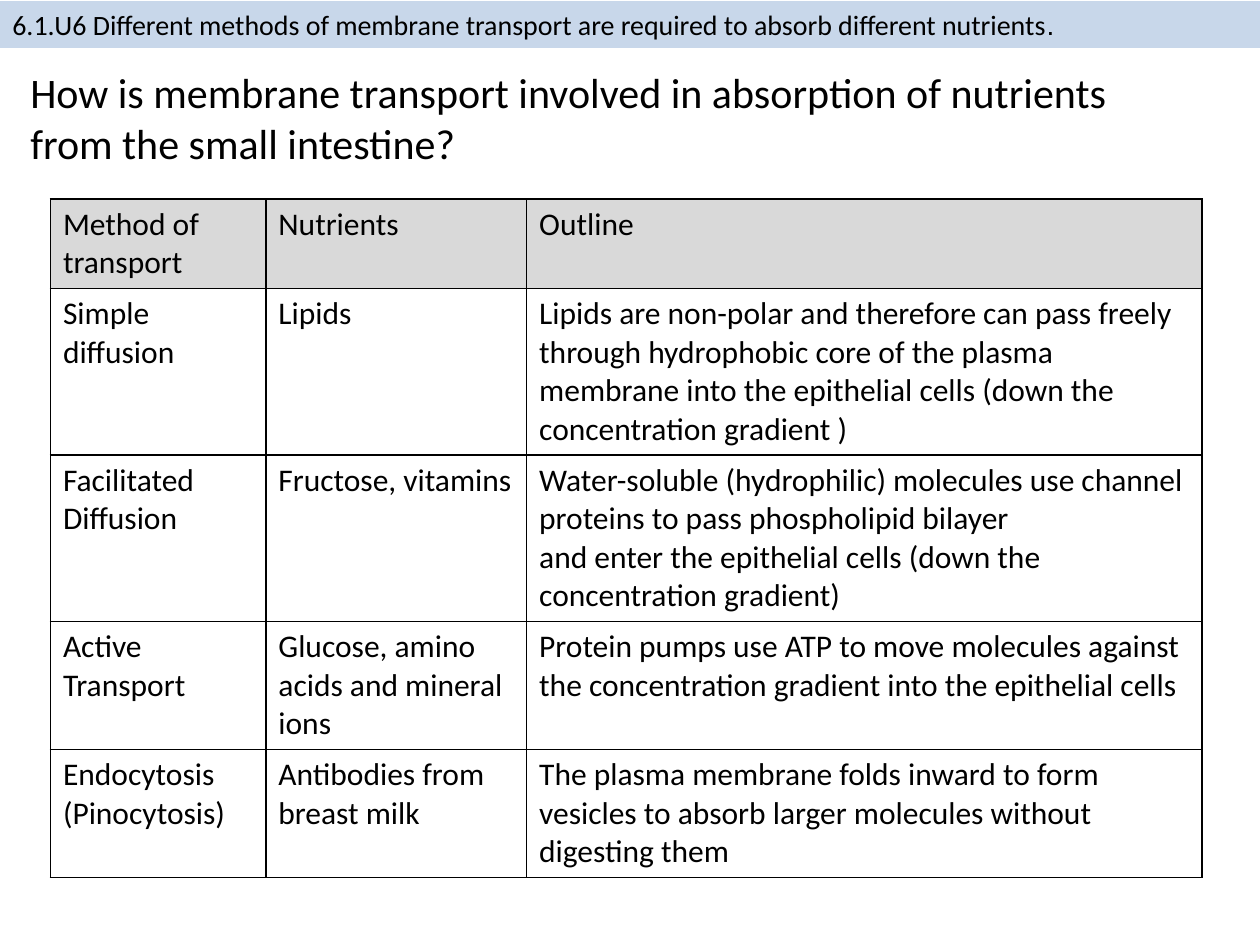
from lxml import etree
from pptx import Presentation
from pptx.dml.color import RGBColor
from pptx.enum import shapes, text
from pptx.oxml import ns
from pptx.util import Inches, Pt

FONT = "Calibri"
BLACK = "000000"
COLUMN_WIDTHS = (1.71, 2.07, 5.36)
ROW_HEIGHT = 0.41  # minimum; rows grow with their text
ROWS = [
    ("Method of transport", "Nutrients", "Outline"),
    ("Simple diffusion", "Lipids",
     "Lipids are non-polar and therefore can pass freely through hydrophobic core "
     "of the plasma membrane into the epithelial cells (down the concentration gradient )"),
    ("Facilitated Diffusion", "Fructose, vitamins",
     "Water-soluble (hydrophilic) molecules use channel proteins to pass phospholipid bilayer\n"
     "and enter the epithelial cells (down the concentration gradient)"),
    ("Active Transport", "Glucose, amino acids and mineral ions",
     "Protein pumps use ATP to move molecules against the concentration gradient "
     "into the epithelial cells"),
    ("Endocytosis (Pinocytosis)", "Antibodies from breast milk",
     "The plasma membrane folds inward to form vesicles to absorb larger molecules "
     "without digesting them"),
]


def rgb(value):
    return RGBColor.from_string(value)


def style_text(tf, size):
    for p in tf.paragraphs:
        p.alignment = text.PP_ALIGN.LEFT
        p.font.name = FONT
        p.font.size = Pt(size)
        p.font.bold = False
        p.font.color.rgb = rgb(BLACK)


def set_borders(cell, color, width):
    tc_pr = cell._tc.get_or_add_tcPr()
    for i, side in enumerate(("lnL", "lnR", "lnT", "lnB")):
        line = etree.Element(ns.qn(f"a:{side}"), w=str(Pt(width)))
        fill = etree.SubElement(line, ns.qn("a:solidFill"))
        etree.SubElement(fill, ns.qn("a:srgbClr"), val=color)
        tc_pr.insert(i, line)


def add_banner(s, left, top, width, height):
    sp = s.shapes.add_shape(shapes.MSO_SHAPE.RECTANGLE, left, top, width, height)
    sp.shadow.inherit = False
    sp.line.fill.background()
    sp.fill.solid()
    sp.fill.fore_color.rgb = rgb("B9CDE5")
    color = sp.fill._xPr.find(".//" + ns.qn("a:srgbClr"))
    etree.SubElement(color, ns.qn("a:alpha"), val="78000")
    tf = sp.text_frame
    tf.word_wrap = True
    tf.vertical_anchor = text.MSO_ANCHOR.MIDDLE
    p = tf.paragraphs[0]
    p.add_run().text = ("6.1.U6 Different methods of membrane transport are required "
                        "to absorb different nutrients")
    r = p.add_run()
    r.text = "."
    r.font.name = "Arial"
    style_text(tf, 16)


def add_question(s, left, top, width, height):
    title = s.shapes.title
    title.left, title.top, title.width, title.height = left, top, width, height
    tf = title.text_frame
    tf.text = ("How is membrane transport involved in absorption of nutrients "
               "from the small intestine?")
    tf.word_wrap = True
    tf.auto_size = text.MSO_AUTO_SIZE.NONE
    tf.vertical_anchor = text.MSO_ANCHOR.TOP
    style_text(tf, 24)


def add_transport_table(s, left, top, width, height):
    table = s.shapes.add_table(len(ROWS), len(COLUMN_WIDTHS), left, top, width, height).table
    table.horz_banding = False
    for column, column_width in zip(table.columns, COLUMN_WIDTHS):
        column.width = Inches(column_width)
    for i, (row, values) in enumerate(zip(table.rows, ROWS)):
        row.height = Inches(ROW_HEIGHT)
        for cell, value in zip(row.cells, values):
            cell.text = value
            style_text(cell.text_frame, 18)
            if i == 0:
                cell.fill.solid()
                cell.fill.fore_color.rgb = rgb("D9D9D9")
            else:
                cell.fill.background()
            set_borders(cell, BLACK, 1)


def main():
    prs = Presentation()
    prs.slide_width, prs.slide_height = Inches(10), Inches(7.5)
    s = prs.slides.add_slide(prs.slide_layouts[5])  # Title Only

    # Syllabus statement across the top
    add_banner(s, 0, Inches(0.01), prs.slide_width, Inches(0.37))
    # Methods of transport
    add_transport_table(s, Inches(0.4), Inches(1.58), Inches(sum(COLUMN_WIDTHS)),
                        Inches(ROW_HEIGHT * len(ROWS)))
    # Question as the slide title
    add_question(s, Inches(0.14), Inches(0.48), Inches(8.91), Inches(0.91))

    prs.save("out.pptx")


if __name__ == "__main__":
    main()
